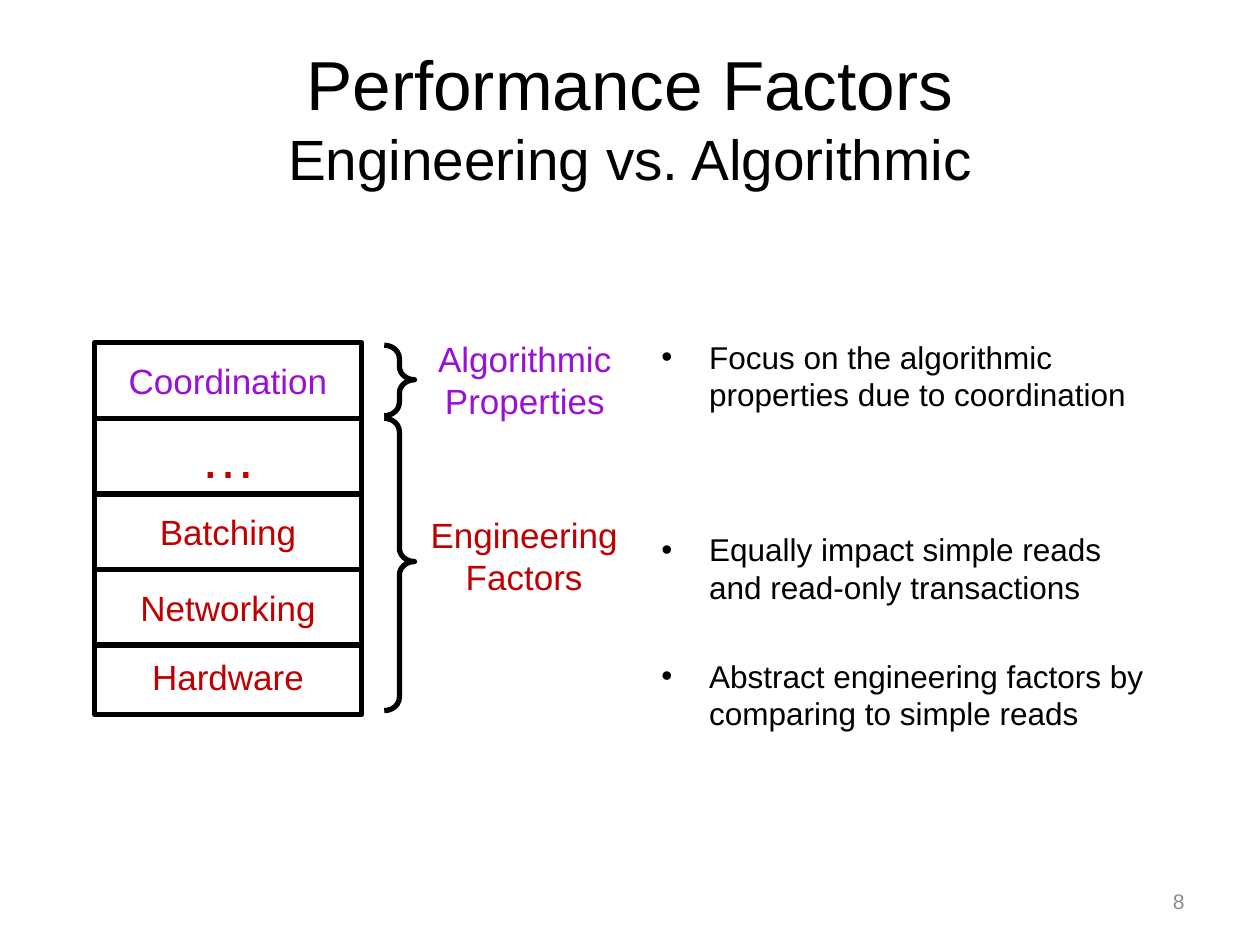
from lxml import etree
from pptx import Presentation
from pptx.dml.color import RGBColor
from pptx.enum.shapes import MSO_SHAPE
from pptx.enum.text import MSO_ANCHOR, PP_ALIGN
from pptx.oxml.ns import qn
from pptx.util import Inches, Pt

CENTER, RIGHT, LEFT = PP_ALIGN.CENTER, PP_ALIGN.RIGHT, PP_ALIGN.LEFT
TOP, MIDDLE = MSO_ANCHOR.TOP, MSO_ANCHOR.MIDDLE
RECTANGLE, BRACE = MSO_SHAPE.RECTANGLE, MSO_SHAPE.RIGHT_BRACE
BLACK, WHITE, GRAY = "000000", "FFFFFF", "8C8C8C"
PURPLE, RED = "9910D9", "C00000"
FONT = "Arial"

# Content
TITLE = [("Performance Factors", 39.6), ("Engineering vs. Algorithmic", 32.4)]
LAYERS = [  # text, size, colour
    ("Coordination", 20, PURPLE),
    ("…", 32, RED),
    ("Batching", 20, RED),
    ("Networking", 20, RED),
    ("Hardware", 20, RED),
]
GROUPS = [  # label lines, colour, label box, brace top, brace height
    (["Algorithmic", "Properties"], PURPLE, (3.32, 2.63, 1.69, 0.77), 2.74, 0.56),
    (["Engineering", "Factors"], RED, (3.29, 4.03, 1.74, 0.77), 3.32, 2.32),
]
NOTES = [  # top of the text box, bullets
    (2.63, ["Focus on the algorithmic properties due to coordination"]),
    (4.16, ["Equally impact simple reads and read-only transactions",
            "Abstract engineering factors by comparing to simple reads"]),
]
PAGE = "8"

# Layout in inches
STACK_LEFT, STACK_TOP, LAYER_WIDTH, LAYER_HEIGHT = 0.75, 2.72, 2.12, 0.6
LAST_OVERLAP = 0.05
BRACE_LEFT, BRACE_WIDTH = 3.05, 0.24
NOTE_LEFT, NOTE_WIDTH, NOTE_HEIGHT = 5.15, 4.15, 3.17
BULLET_INDENT = 0.38
BULLET_GAP = 29  # points


def color(value):
    return RGBColor.from_string(value)


def inches(box):
    return [Inches(length) for length in box]


def style(font, size, value):
    font.name, font.size = FONT, Pt(size)
    font.color.rgb = color(value)


def fill_text(frame, lines, size, value, align=CENTER, anchor=TOP):
    frame.word_wrap = True
    frame.vertical_anchor = anchor
    for i, line in enumerate(lines):
        paragraph = frame.paragraphs[0] if i == 0 else frame.add_paragraph()
        paragraph.text = line
        paragraph.alignment = align
        style(paragraph.font, size, value)


def add_text(slide, box, *args):
    frame = slide.shapes.add_textbox(*inches(box)).text_frame
    fill_text(frame, *args)
    return frame


def add_outlined(slide, kind, box):
    shape = slide.shapes.add_shape(kind, *inches(box))
    shape.shadow.inherit = False
    shape.line.color.rgb = color(BLACK)
    shape.line.width = Pt(3)
    etree.SubElement(shape.line._get_or_add_ln(), qn("a:round"))
    return shape


def add_bullet(paragraph):
    properties = paragraph._p.get_or_add_pPr()
    properties.set("marL", str(Inches(BULLET_INDENT)))
    properties.set("indent", str(-Inches(BULLET_INDENT)))
    etree.SubElement(properties, qn("a:buFont")).set("typeface", FONT)
    etree.SubElement(properties, qn("a:buChar")).set("char", "•")


def main():
    deck = Presentation()
    deck.slide_width, deck.slide_height = Inches(10), Inches(7.5)
    slide = deck.slides.add_slide(deck.slide_layouts[6])

    # Title: two sizes in one paragraph
    frame = add_text(slide, (0.5, 0.3, 9, 1.25), [""], TITLE[0][1], BLACK, CENTER, MIDDLE)
    heading = frame.paragraphs[0]
    for i, (line, size) in enumerate(TITLE):
        if i:
            heading.add_line_break()
        run = heading.add_run()
        run.text = line
        style(run.font, size, BLACK)

    # Layer stack, drawn from the bottom up
    last = len(LAYERS) - 1
    for i, (name, size, value) in reversed(list(enumerate(LAYERS))):
        top = STACK_TOP + i * LAYER_HEIGHT - (LAST_OVERLAP if i == last else 0)
        layer = add_outlined(slide, RECTANGLE, (STACK_LEFT, top, LAYER_WIDTH, LAYER_HEIGHT))
        layer.fill.solid()
        layer.fill.fore_color.rgb = color(WHITE)
        fill_text(layer.text_frame, [name], size, value, CENTER, MIDDLE)

    # Braces with their labels
    for lines, value, label_box, top, height in GROUPS:
        brace = add_outlined(slide, BRACE, (BRACE_LEFT, top, BRACE_WIDTH, height))
        brace.fill.background()
        brace.adjustments[0], brace.adjustments[1] = 0.44, 0.49
        add_text(slide, label_box, lines, 20, value)

    # Bulleted notes
    for top, bullets in NOTES:
        box = (NOTE_LEFT, top, NOTE_WIDTH, NOTE_HEIGHT)
        frame = add_text(slide, box, bullets, 18, BLACK, LEFT)
        for i, paragraph in enumerate(frame.paragraphs):
            paragraph.space_before = Pt(BULLET_GAP if i else 0)
            add_bullet(paragraph)

    # Page number
    add_text(slide, (7.17, 6.95, 2.33, 0.4), [PAGE], 12, GRAY, RIGHT, MIDDLE)

    deck.save("out.pptx")


if __name__ == "__main__":
    main()
